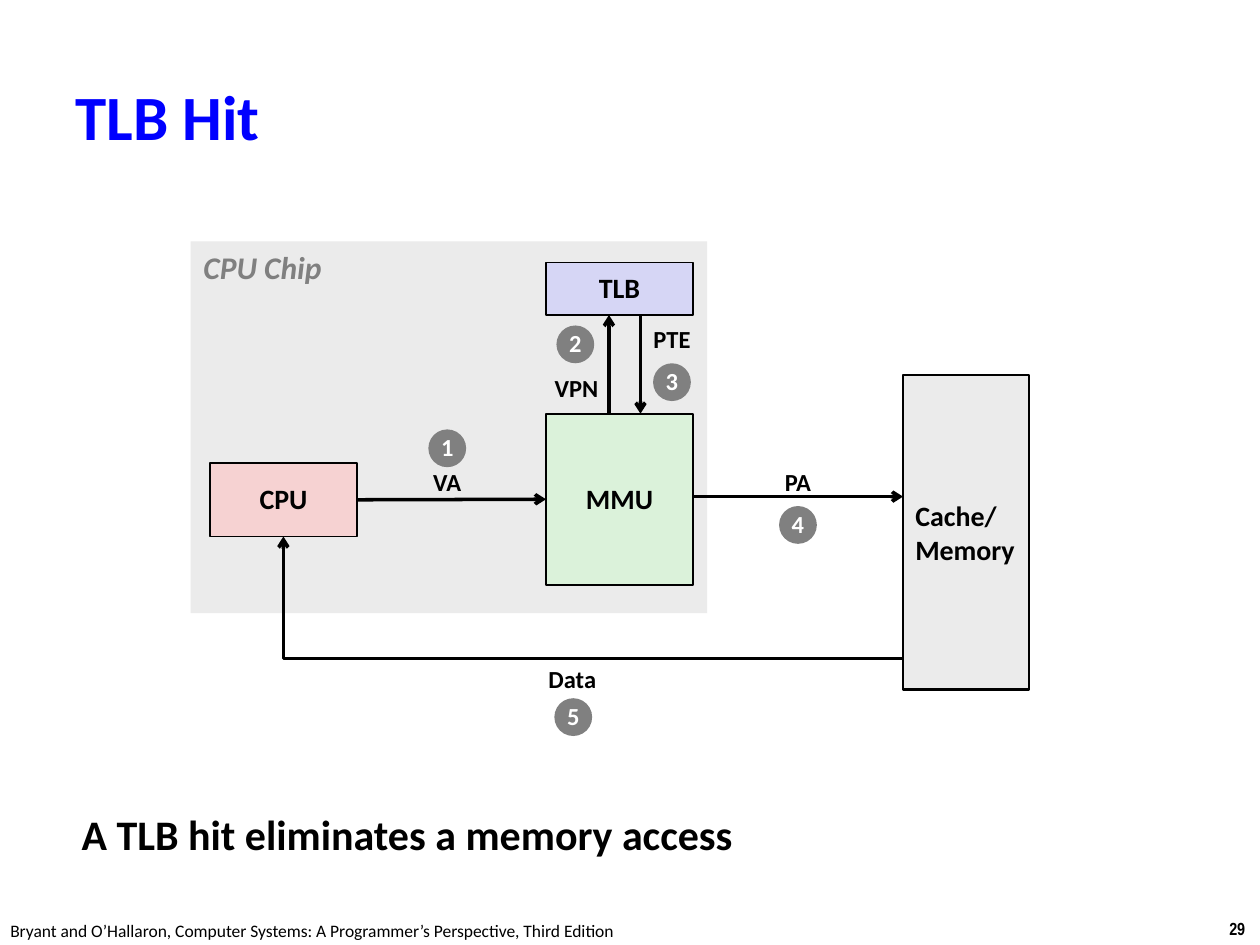
from dataclasses import dataclass

from lxml.etree import SubElement
from pptx import Presentation
from pptx.dml.color import RGBColor
from pptx.enum.shapes import MSO_CONNECTOR, MSO_SHAPE
from pptx.enum.text import MSO_ANCHOR, MSO_AUTO_SIZE, PP_ALIGN
from pptx.oxml.ns import qn
from pptx.util import Inches, Pt

COLUMNS, ROWS = 120, 90
BLACK, WHITE, GRAY, PALE, BLUE = "000000", "FFFFFF", "808080", "EBEBEB", "0000FF"
BADGE_SIZE, LABEL_HEIGHT = 3.6, 4


@dataclass(frozen=True)
class Area:
    """A rectangle in grid columns and rows."""
    column: float
    row: float
    width: float
    height: float


@dataclass(frozen=True)
class Style:
    """How a piece of text looks."""
    size: float
    color: str = BLACK
    bold: bool = True
    italic: bool = False
    font: str = "Calibri"
    align: PP_ALIGN = PP_ALIGN.LEFT
    spacing: float = 1.0


@dataclass(frozen=True)
class Unit:
    """A hardware unit of the diagram."""
    text: str
    area: Area
    fill: str
    style: Style
    border: float = 1


@dataclass(frozen=True)
class Step:
    """A numbered step with the centres of its badge and label."""
    number: int
    label: str
    badge: tuple[float, float]
    caption: tuple[float, float]
    width: float


UNIT_STYLE = Style(16, align=PP_ALIGN.CENTER, spacing=0.98)
LABEL_STYLE = Style(14, align=PP_ALIGN.CENTER, spacing=0.98)
BADGE_STYLE = Style(14, WHITE, align=PP_ALIGN.CENTER, spacing=0.98)

CHIP = Area(18.15, 23, 49.2, 35.4)
CPU = Unit("CPU", Area(20, 44.1, 14, 7), "F6D2D2", UNIT_STYLE)
MMU = Unit("MMU", Area(52, 39.4, 14, 16.3), "DBF2DA", UNIT_STYLE)
TLB = Unit("TLB", Area(52, 25, 14, 5), "D6D6F5", UNIT_STYLE)
MEMORY = Unit("Cache/\nMemory", Area(86, 35.7, 12, 30), PALE, Style(16), 1.5)

STEPS = [
    Step(1, "VA", (42.6, 42.7), (42.6, 46), 5.6),
    Step(2, "VPN", (54.8, 32.8), (54.9, 37), 6.9),
    Step(3, "PTE", (64, 36.4), (64, 32.4), 6.3),
    Step(4, "PA", (76, 50), (76, 46), 5.6),
    Step(5, "Data", (54.6, 68.3), (54.5, 64.7), 7.3),
]

CAPTIONS = [
    ("TLB Hit", Area(6, 5.8, 114, 10.3), Style(36, BLUE), MSO_ANCHOR.MIDDLE, True),
    ("CPU Chip", Area(18.2, 23, 14, 4.8), Style(18, GRAY, italic=True), MSO_ANCHOR.TOP, False),
    ("A TLB hit eliminates a memory access", Area(6.6, 76.4, 94.3, 7.6), Style(24),
     MSO_ANCHOR.TOP, True),
    ("Bryant and O’Hallaron, Computer Systems: A Programmer’s Perspective, Third Edition",
     Area(-0.2, 87, 61, 3.2), Style(10, bold=False), MSO_ANCHOR.TOP, False),
    ("29", Area(115.9, 86.8, 4.1, 3.2), Style(10, font="Arial Narrow"), MSO_ANCHOR.TOP, False),
]


def rgb(color: str) -> RGBColor:
    """Turn a hex string into a colour."""
    return RGBColor.from_string(color)


def across(columns: float) -> int:
    """Turn grid columns into a length."""
    return int(Inches(10) * columns / COLUMNS)


def down(rows: float) -> int:
    """Turn grid rows into a length."""
    return int(Inches(7.5) * rows / ROWS)


def place(area: Area) -> tuple[int, int, int, int]:
    """Give left, top, width and height of an area."""
    return across(area.column), down(area.row), across(area.width), down(area.height)


def centered(center: tuple[float, float], width: float, height: float) -> Area:
    """Build an area around its centre."""
    return Area(center[0] - width / 2, center[1] - height / 2, width, height)


def write(shape, text: str, style: Style, anchor=MSO_ANCHOR.MIDDLE, wrap: bool = False) -> None:
    """Write each line of text as a paragraph of one run."""
    frame = shape.text_frame
    frame.word_wrap = wrap
    frame.vertical_anchor = anchor
    for index, line in enumerate(text.split("\n")):
        paragraph = frame.add_paragraph() if index else frame.paragraphs[0]
        paragraph.alignment = style.align
        paragraph.line_spacing = style.spacing
        run = paragraph.add_run()
        run.text = line
        run.font.name = style.font
        run.font.size = Pt(style.size)
        run.font.bold = style.bold
        run.font.italic = style.italic
        run.font.color.rgb = rgb(style.color)


def draw_shape(slide, kind: MSO_SHAPE, area: Area, fill: str, border: float = 0):
    """Draw a filled shape, outlined in black if it has a border."""
    shape = slide.shapes.add_shape(kind, *place(area))
    shape.shadow.inherit = False
    shape.fill.solid()
    shape.fill.fore_color.rgb = rgb(fill)
    if border:
        shape.line.color.rgb = rgb(BLACK)
        shape.line.width = Pt(border)
    else:
        shape.line.fill.background()
    return shape


def draw_unit(slide, unit: Unit):
    """Draw a named hardware unit."""
    shape = draw_shape(slide, MSO_SHAPE.RECTANGLE, unit.area, unit.fill, unit.border)
    write(shape, unit.text, unit.style)
    return shape


def draw_text(slide, text: str, area: Area, style: Style, anchor=MSO_ANCHOR.MIDDLE,
              wrap: bool = False) -> None:
    """Draw a free text."""
    box = slide.shapes.add_textbox(*place(area))
    write(box, text, style, anchor, wrap)
    if not wrap:
        box.text_frame.auto_size = MSO_AUTO_SIZE.SHAPE_TO_FIT_TEXT


def draw_step(slide, step: Step) -> None:
    """Draw the label and the numbered badge of a step."""
    draw_text(slide, step.label, centered(step.caption, step.width, LABEL_HEIGHT), LABEL_STYLE)
    badge = draw_shape(slide, MSO_SHAPE.OVAL, centered(step.badge, BADGE_SIZE, BADGE_SIZE), GRAY)
    write(badge, str(step.number), BADGE_STYLE)


def draw_arrow(slide, start: tuple[float, float], end: tuple[float, float], bent: bool = False):
    """Draw an arrow, straight or with one corner."""
    kind = MSO_CONNECTOR.ELBOW if bent else MSO_CONNECTOR.STRAIGHT
    arrow = slide.shapes.add_connector(
        kind, across(start[0]), down(start[1]), across(end[0]), down(end[1]))
    arrow.line.color.rgb = rgb(BLACK)
    arrow.line.width = Pt(2)
    properties = arrow.element.spPr
    SubElement(properties.find(qn("a:ln")), qn("a:tailEnd"), type="arrow")
    SubElement(properties, qn("a:effectLst"))
    if bent:
        properties.find(qn("a:prstGeom")).set("prst", "bentConnector2")
    return arrow


def main() -> None:
    """Build the slide and save it."""
    deck = Presentation()
    deck.slide_width, deck.slide_height = Inches(10), Inches(7.5)
    slide = deck.slides.add_slide(deck.slide_layouts[6])

    draw_shape(slide, MSO_SHAPE.RECTANGLE, CHIP, PALE)
    cpu, mmu, _, _ = [draw_unit(slide, unit) for unit in (CPU, MMU, TLB, MEMORY)]

    virtual_address = draw_arrow(slide, (34, 47.6), (52, 47.55))
    virtual_address.begin_connect(cpu, 3)
    virtual_address.end_connect(mmu, 1)
    draw_arrow(slide, (58, 39.4), (58, 30))
    draw_arrow(slide, (61, 30), (61, 39.4))
    draw_arrow(slide, (66, 47.3), (86, 47.3))
    draw_arrow(slide, (86, 62.7), (27, 51.1), bent=True)

    for step in STEPS:
        draw_step(slide, step)
    for caption in CAPTIONS:
        draw_text(slide, *caption)
    deck.save("out.pptx")


if __name__ == "__main__":
    main()
